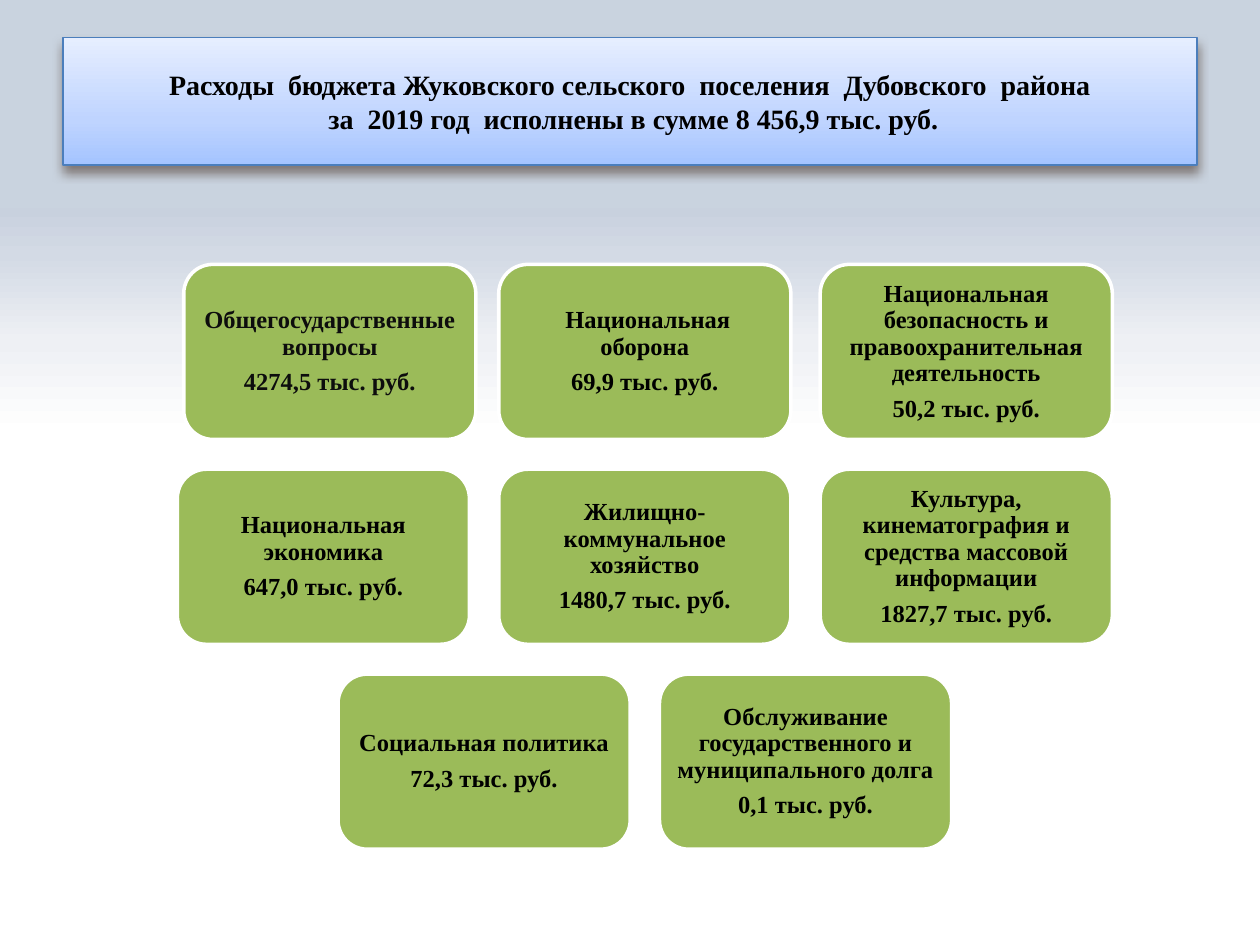
from lxml.etree import SubElement
from pptx import Presentation
from pptx.dml.color import RGBColor
from pptx.enum.shapes import MSO_SHAPE
from pptx.enum.text import MSO_ANCHOR, PP_ALIGN
from pptx.oxml.ns import qn
from pptx.util import Cm, Pt

TITLE = ("Расходы  бюджета Жуковского сельского  поселения  Дубовского  района\v"
         " за  2019 год  исполнены в сумме 8 456,9 тыс. руб.")
ROWS = [
    [("Общегосударственные вопросы", "4274,5"),
     (" Национальная оборона", "69,9"),
     ("Национальная безопасность и правоохранительная деятельность", "50,2")],
    [("Национальная экономика", "647,0"),
     ("Жилищно-коммунальное хозяйство", "1480,7"),
     ("Культура, кинематография и средства массовой информации", "1827,7")],
    [("Социальная политика", "72,3"),
     ("Обслуживание государственного и муниципального долга", "0,1")],
]
BACKDROP = [(0, "C9D3DF"), (22, "C8D1DE"), (27, "D3DAE5"), (36, "EEF0F4"), (46, "FFFFFF")]
BANNER = [(0, "A4C4FF"), (35, "BFD4FF"), (100, "E6EEFF")]
CARD_W, CARD_H = 5.89, 3.53
STEP_X, STEP_Y = 6.48, 4.13
CENTER, TOP = 13.0, 5.33
FIRST_SHIFT = 0.13


def rgb(color):
    return RGBColor.from_string(color)


def add(parent, tag, **attrs):
    return SubElement(parent, qn(tag), {k: str(v) for k, v in attrs.items()})


def set_gradient(fill, owner, stops, angle):
    fill.gradient()
    fill.gradient_angle = angle
    gs_list = owner.xpath(".//a:gsLst")[0]
    for gs in list(gs_list):
        gs_list.remove(gs)
    for pos, color in stops:
        gs = add(gs_list, "a:gs", pos=pos * 1000)
        add(gs, "a:srgbClr", val=color)


def set_line(sp, color, width):
    sp.line.color.rgb = rgb(color)
    sp.line.width = Pt(width)


def set_text(sp, text, size, color):
    tf = sp.text_frame
    tf.text = text
    tf.word_wrap = True
    tf.vertical_anchor = MSO_ANCHOR.MIDDLE
    for p in tf.paragraphs:
        p.alignment = PP_ALIGN.CENTER
        for r in p.runs:
            r.font.name = "Times New Roman"
            r.font.size = Pt(size)
            r.font.bold = True
            r.font.color.rgb = rgb(color)


def add_title(s):
    sp = s.shapes.title
    sp.left, sp.top, sp.width, sp.height = Cm(1.27), Cm(0.76), Cm(22.86), Cm(2.57)
    set_gradient(sp.fill, sp.element, BANNER, 90)
    set_line(sp, "4B7EBC", 0.75)
    effects = add(sp.element.spPr, "a:effectLst")
    shadow = add(effects, "a:outerShdw", blurRad=Pt(6), dist=Pt(4), dir=5400000, rotWithShape=0)
    add(add(shadow, "a:srgbClr", val="4E3B30"), "a:alpha", val=60000)
    set_text(sp, TITLE, 16, "000000")


def add_card(s, x, y, name, amount, color):
    sp = s.shapes.add_shape(MSO_SHAPE.FLOWCHART_ALTERNATE_PROCESS,
                            Cm(x), Cm(y), Cm(CARD_W), Cm(CARD_H))
    sp.shadow.inherit = False
    sp.fill.solid()
    sp.fill.fore_color.rgb = rgb("9BBB59")
    set_line(sp, "FFFFFF", 2)
    set_text(sp, f"{name}\n{amount} тыс. руб.", 14, color)
    tf = sp.text_frame
    tf.margin_left = tf.margin_right = tf.margin_top = tf.margin_bottom = Cm(0.15)
    for p in tf.paragraphs:
        p.line_spacing = 0.9
        p.space_after = Pt(5)


def main():
    """Build the slide of budget spending by section."""
    prs = Presentation()
    prs.slide_width, prs.slide_height = Cm(25.4), Cm(19.05)
    s = prs.slides.add_slide(prs.slide_layouts[5])
    set_gradient(s.background.fill, s.element, BACKDROP, 270)
    add_title(s)
    for i, row in enumerate(ROWS):
        left = CENTER - ((len(row) - 1) * STEP_X + CARD_W) / 2
        for j, (name, amount) in enumerate(row):
            first = i == j == 0
            x = left + j * STEP_X + (FIRST_SHIFT if first else 0)
            add_card(s, x, TOP + i * STEP_Y, name, amount, "0D0D0D" if first else "000000")
    prs.save("out.pptx")


if __name__ == "__main__":
    main()
